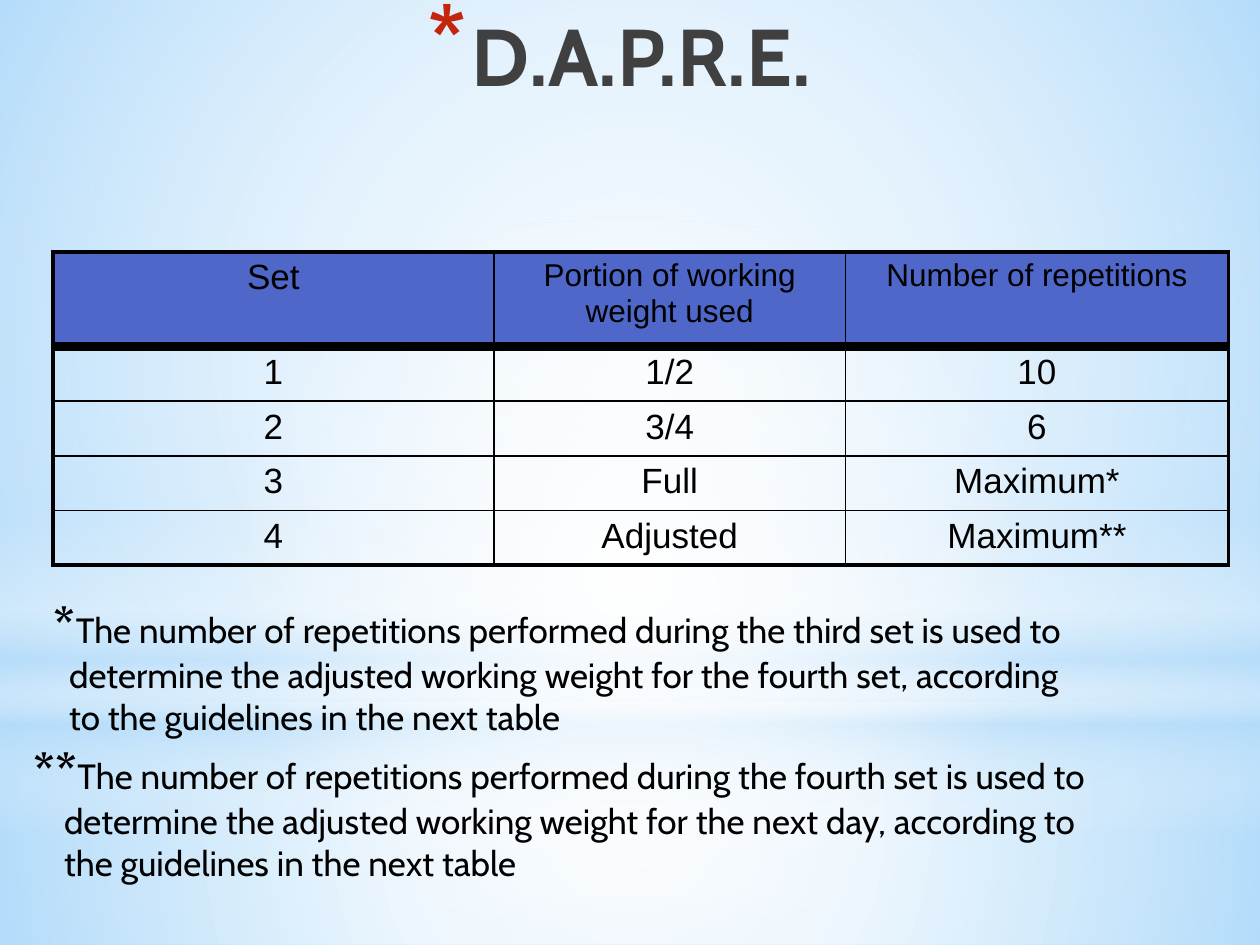
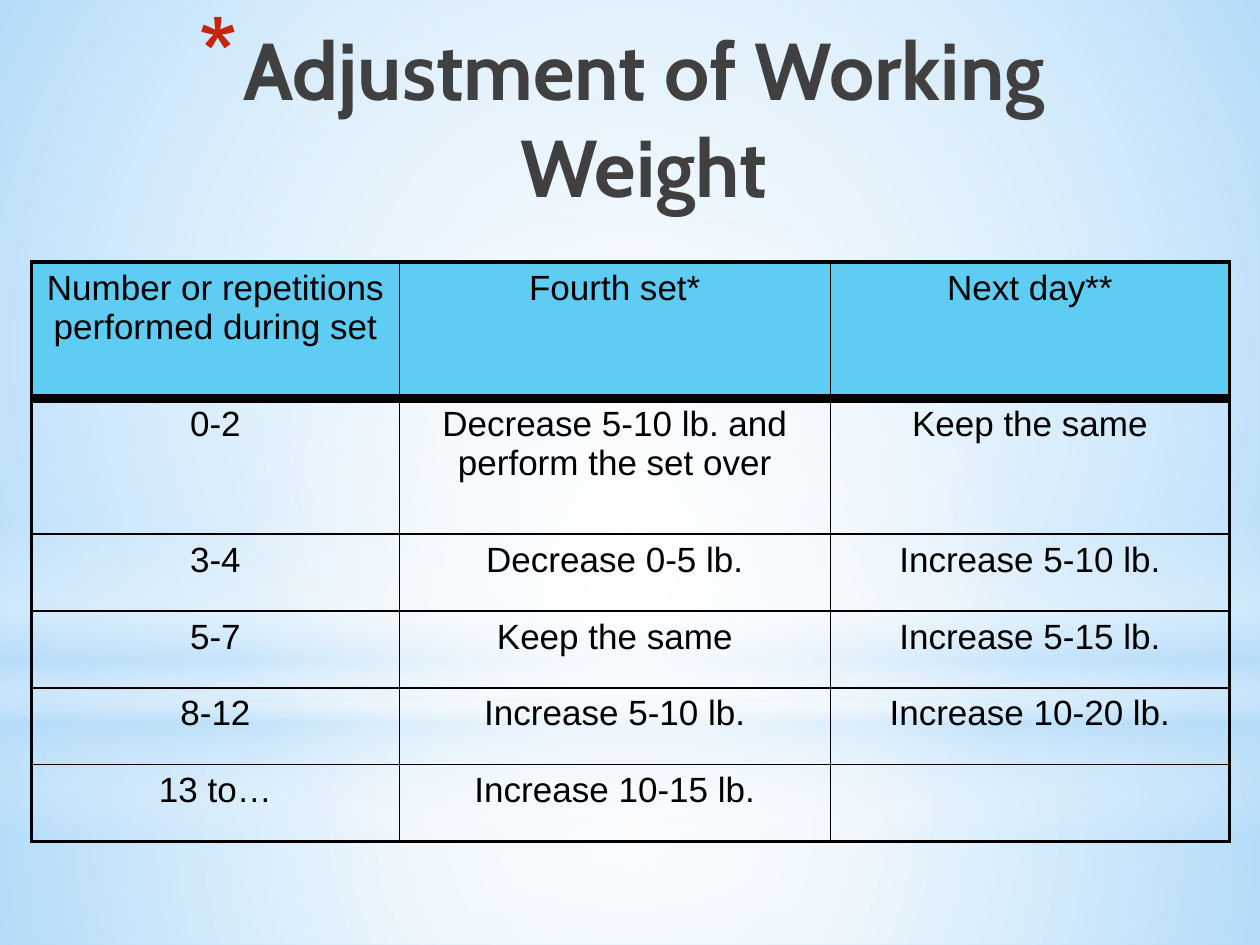
"""Build two slides on D.A.P.R.E. sets and working-weight adjustment."""
from dataclasses import dataclass

from lxml import etree
from pptx import Presentation
from pptx.dml.color import RGBColor
from pptx.enum.shapes import MSO_SHAPE
from pptx.enum.text import MSO_ANCHOR, PP_ALIGN
from pptx.oxml import parse_xml
from pptx.oxml.ns import nsdecls, qn
from pptx.util import Inches, Pt

RECT, OVAL = MSO_SHAPE.RECTANGLE, MSO_SHAPE.OVAL
CENTER, LEFT, TOP = PP_ALIGN.CENTER, PP_ALIGN.LEFT, MSO_ANCHOR.TOP
PLAIN_TABLE = "{2D5ABB26-0587-4C30-8999-92F81FD0307C}"


@dataclass(frozen=True)
class Theme:
    """Colours, fonts, type sizes and line widths."""
    sky: str = "B4DCFA"
    white: str = "FFFFFF"
    black: str = "000000"
    title: str = "404040"
    bullet: str = "C3260C"
    indigo: str = "4E67C8"
    cyan: str = "5ECCF3"
    heading_font: str = "Cabin"
    table_font: str = "Arial"
    title_size: int = 46
    mark_size: int = 28
    body_size: int = 20
    small_size: int = 18
    bullet_percent: int = 128
    outer_line: float = 2.25
    inner_line: float = 1
    header_line: float = 6


T = Theme()
CIRCLE = ('<a:path path="circle"><a:fillToRect l="50000" t="50000" '
          'r="50000" b="50000"/></a:path>')
DOWN = '<a:lin ang="5400000" scaled="0"/>'
BACKDROP = [
    (RECT, 5.58, 1.92, CIRCLE,
     [(0, T.white, 91), (37, T.white, 76), (100, T.sky, 79)]),
    (RECT, 0, 5.58, CIRCLE,
     [(0, T.white, 89), (48, T.white, 62), (100, T.sky, 79)]),
    (RECT, 4.12, 2.5, DOWN,
     [(0, T.white, 0), (29, T.white, 30), (45, T.sky, 40),
      (55, T.white, 26), (65, T.sky, 60), (100, T.white, 0)]),
    (OVAL, 1.75, 5.58, CIRCLE, [(0, T.white, 100), (56, T.white, 0)]),
]


def rgb(value):
    """Turn a hex string into a colour."""
    return RGBColor.from_string(value)


def add_gradient_shape(s, kind, top, height, direction, stops):
    """Add a full-width shape with a translucent gradient."""
    sp = s.shapes.add_shape(kind, 0, Inches(top), Inches(10), Inches(height))
    sp.shadow.inherit = False
    sp.line.fill.background()
    sp.fill.background()
    marks = "".join(
        f'<a:gs pos="{pos * 1000}"><a:srgbClr val="{color}">'
        f'<a:alpha val="{alpha * 1000}"/></a:srgbClr></a:gs>'
        for pos, color, alpha in stops)
    gradient = parse_xml(f'<a:gradFill {nsdecls("a")} rotWithShape="1">'
                         f'<a:gsLst>{marks}</a:gsLst>{direction}</a:gradFill>')
    props = sp.fill._xPr
    props.replace(props.find(qn("a:noFill")), gradient)


def add_base_slide(prs):
    """Add a blank slide with the shared sky backdrop."""
    s = prs.slides.add_slide(prs.slide_layouts[6])
    for band in BACKDROP:
        add_gradient_shape(s, *band)
    return s


def add_run(p, text, color=T.black, **formats):
    """Add a run and apply its font attributes."""
    r = p.add_run()
    r.text = text
    for key, value in formats.items():
        setattr(r.font, key, value)
    r.font.color.rgb = rgb(color)


def add_text_box(s, left, top, width, height):
    """Add a wrapping, top-anchored text box and return its frame."""
    box = s.shapes.add_textbox(*map(Inches, (left, top, width, height)))
    tf = box.text_frame
    tf.word_wrap = True
    tf.vertical_anchor = TOP
    return tf


def add_title(s, text, left, top):
    """Add the centred title with its red asterisk bullet."""
    p = add_text_box(s, left, top, 7.83, 1.55).paragraphs[0]
    p.alignment = CENTER
    pPr = p._p.get_or_add_pPr()
    pPr.set("marL", str(Inches(0.35)))
    pPr.set("indent", str(Inches(-0.35)))
    color = etree.SubElement(pPr, qn("a:buClr"))
    etree.SubElement(color, qn("a:srgbClr"), val=T.bullet)
    etree.SubElement(pPr, qn("a:buSzPct"), val=str(T.bullet_percent * 1000))
    etree.SubElement(pPr, qn("a:buChar"), char="*")
    add_run(p, text, T.title, name=T.heading_font,
            size=Pt(T.title_size), bold=True)


def add_footnote(s, mark, lines, left, top, width, indent):
    """Add a footnote whose later lines are indented."""
    tf = add_text_box(s, left, top, width, 1.23)
    for i, line in enumerate(lines):
        p = tf.add_paragraph() if i else tf.paragraphs[0]
        p.alignment = LEFT
        if i:
            p._p.get_or_add_pPr().set("marL", str(Inches(indent)))
        else:
            add_run(p, mark, name=T.heading_font,
                    size=Pt(T.mark_size), bold=True)
        add_run(p, line, name=T.heading_font,
                size=Pt(T.body_size), bold=False)


def set_borders(cell, widths):
    """Draw black cell borders from a side-to-width dict."""
    tcPr = cell._tc.get_or_add_tcPr()
    for side, width in widths.items():
        ln = etree.SubElement(tcPr, qn(f"a:ln{side}"), w=str(Pt(width)))
        fill = etree.SubElement(ln, qn("a:solidFill"))
        etree.SubElement(fill, qn("a:srgbClr"), val=T.black)


def add_grid(s, left, top, col_widths, row_heights, rows, header_fill,
             header_sizes):
    """Add a table with a filled header row and a heavy rule below it."""
    last_row, last_col = len(rows) - 1, len(col_widths) - 1
    table = s.shapes.add_table(
        len(rows), len(col_widths), Inches(left), Inches(top),
        Inches(sum(col_widths)), Inches(sum(row_heights))).table
    table.first_row = table.horz_banding = False
    table._tbl.tblPr.find(qn("a:tableStyleId")).text = PLAIN_TABLE
    for column, width in zip(table.columns, col_widths):
        column.width = Inches(width)
    for i, (row, height) in enumerate(zip(rows, row_heights)):
        table.rows[i].height = Inches(height)
        for j, text in enumerate(row):
            cell = table.cell(i, j)
            set_borders(cell, {
                "L": T.inner_line if j else T.outer_line,
                "R": T.outer_line if j == last_col else T.inner_line,
                "T": {0: T.outer_line, 1: T.header_line}.get(i, T.inner_line),
                "B": {0: T.header_line,
                      last_row: T.outer_line}.get(i, T.inner_line)})
            if i:
                cell.fill.background()
            else:
                cell.fill.solid()
                cell.fill.fore_color.rgb = rgb(header_fill)
            p = cell.text_frame.paragraphs[0]
            p.alignment = CENTER
            if text:
                size = T.body_size if i else header_sizes[j]
                add_run(p, text, name=T.table_font, size=Pt(size))


def build_sets_slide(prs):
    """Build the slide listing the four sets."""
    s = add_base_slide(prs)
    add_title(s, "D.A.P.R.E.", 1, 0)
    rows = [
        ("Set", "Portion of working weight used", "Number of repetitions"),
        ("1", "1/2", "10"),
        ("2", "3/4", "6"),
        ("3", "Full", "Maximum*"),
        ("4", "Adjusted", "Maximum**"),
    ]
    add_grid(s, 0.42, 2, [3.5, 2.79, 3.04], [0.75] + [0.41] * 4, rows,
             T.indigo, [T.body_size, T.small_size, T.small_size])
    add_footnote(s, "*", [
        "The number of repetitions performed during the third set is used to",
        "determine the adjusted working weight for the fourth set, according",
        "to the guidelines in the next table",
    ], 0.33, 4.67, 8.62, 0.12)
    add_footnote(s, "**", [
        "The number of repetitions performed during the fourth set is used to",
        "determine the adjusted working weight for the next day, according to",
        "the guidelines in the next table",
    ], 0.17, 5.83, 8.9, 0.24)


def build_adjustment_slide(prs):
    """Build the slide with the weight adjustment guidelines."""
    s = add_base_slide(prs)
    add_title(s, "Adjustment of Working Weight", 1.02, 0.11)
    rows = [
        ("Number or repetitions performed during set", "Fourth set*",
         "Next day**"),
        ("0-2", "Decrease 5-10 lb. and perform the set over",
         "Keep the same"),
        ("3-4", "Decrease 0-5 lb.", "Increase 5-10 lb."),
        ("5-7", "Keep the same", "Increase 5-15 lb."),
        ("8-12", "Increase 5-10 lb.", "Increase 10-20 lb."),
        ("13 to…", "Increase 10-15 lb.", ""),
    ]
    add_grid(s, 0.25, 2.08, [2.92, 3.42, 3.17], [1.08] * 2 + [0.61] * 4,
             rows, T.cyan, [T.body_size] * 3)


def main():
    """Create and save the presentation."""
    prs = Presentation()
    prs.slide_width, prs.slide_height = Inches(10), Inches(7.5)
    fill = prs.slide_master.background.fill
    fill.solid()
    fill.fore_color.rgb = rgb(T.sky)
    build_sets_slide(prs)
    build_adjustment_slide(prs)
    prs.save("out.pptx")


if __name__ == "__main__":
    main()
